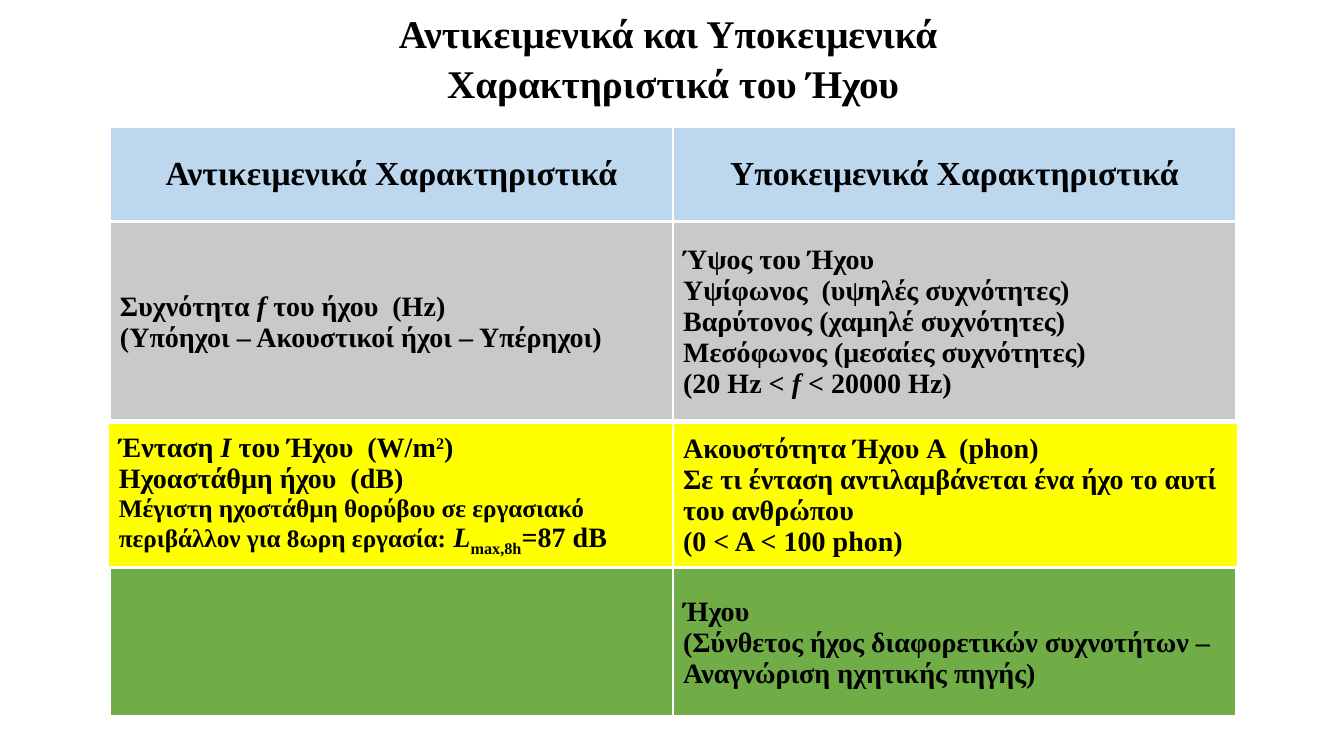
from dataclasses import dataclass

import pptx
import pptx.util
import pptx.dml.color
import pptx.enum.text
import pptx.oxml
import pptx.oxml.ns
from pptx.util import Inches

ALIGN = pptx.enum.text.PP_ALIGN
ANCHOR = pptx.enum.text.MSO_ANCHOR


@dataclass(frozen=True)
class Theme:
    font: str = "Times New Roman"
    text: str = "000000"
    border: str = "FFFFFF"
    header: str = "BDD7EE"
    frequency: str = "C9C9C9"
    intensity: str = "FFFF00"
    timbre: str = "70AD47"
    title_size: int = 28
    header_size: int = 24
    body_size: int = 20
    note_size: int = 18


@dataclass(frozen=True)
class Run:
    text: str
    italic: bool = False
    baseline: int = 0  # percent; positive is superscript
    size: int | None = None


Line = list[Run]


@dataclass(frozen=True)
class Band:
    left: float
    top: float
    width: float
    height: float
    fill: str
    cells: tuple[list[Line], list[Line]]
    size: int
    align: ALIGN = ALIGN.LEFT


T = Theme()

# Content: one single-row table per band
BANDS = [
    Band(1.09, 1.26, 11.17, 0.94, T.header, (
        [[Run("Αντικειμενικά Χαρακτηριστικά")]],
        [[Run("Υποκειμενικά Χαρακτηριστικά")]],
    ), T.header_size, ALIGN.CENTER),
    Band(1.09, 2.21, 11.17, 1.97, T.frequency, (
        [[Run("Συχνότητα "), Run("f", italic=True), Run(" του ήχου  (Hz)")],
         [Run("(Υπόηχοι – Ακουστικοί ήχοι – Υπέρηχοι)")]],
        [[Run("Ύψος του Ήχου")],
         [Run("Υψίφωνος  (υψηλές συχνότητες)")],
         [Run("Βαρύτονος (χαμηλέ συχνότητες)")],
         [Run("Μεσόφωνος (μεσαίες συχνότητες)")],
         [Run("(20 Hz < "), Run("f", italic=True), Run(" < 20000 Hz)")]],
    ), T.body_size),
    Band(1.08, 4.2, 11.19, 1.43, T.intensity, (
        [[Run("Ένταση "), Run("Ι", italic=True), Run(" του Ήχου  (W/m"),
          Run("2", baseline=30), Run(")")],
         [Run("Ηχοαστάθμη ήχου  (dB)")],
         [Run("Μέγιστη ηχοστάθμη θορύβου σε εργασιακό περιβάλλον για 8ωρη εργασία:",
              size=T.note_size),
          Run(" "), Run("L", italic=True), Run("max,8h", baseline=-25), Run("=87 dB")]],
        [[Run("Ακουστότητα Ήχου A  (phon)")],
         [Run("Σε τι ένταση αντιλαμβάνεται ένα ήχο το αυτί του ανθρώπου")],
         [Run("(0 < A < 100 phon)")]],
    ), T.body_size),
    Band(1.09, 5.64, 11.17, 1.47, T.timbre, (
        [],
        [[Run("Ήχου")],
         [Run("(Σύνθετος ήχος διαφορετικών συχνοτήτων – Αναγνώριση ηχητικής πηγής)")]],
    ), T.body_size),
]
TITLE = [[Run("Αντικειμενικά και Υποκειμενικά ")], [Run("Χαρακτηριστικά του Ήχου")]]


def rgb(value: str) -> pptx.dml.color.RGBColor:
    return pptx.dml.color.RGBColor.from_string(value)


def write_lines(tf, lines: list[Line], size: int, align: ALIGN,
                spacing: float = 1.0) -> None:
    for i, line in enumerate(lines):
        p = tf.paragraphs[0] if i == 0 else tf.add_paragraph()
        p.alignment = align
        p.line_spacing = spacing
        p.font.name = T.font
        p.font.size = pptx.util.Pt(size)
        p.font.bold = True
        p.font.color.rgb = rgb(T.text)
        for run in line:
            r = p.add_run()
            r.text = run.text
            if run.italic:
                r.font.italic = True
            if run.size:
                r.font.size = pptx.util.Pt(run.size)
            if run.baseline:
                r.font._element.set("baseline", str(run.baseline * 1000))


def add_borders(cell) -> None:
    tc_pr = cell._tc.get_or_add_tcPr()
    for side, points in (("L", 1), ("R", 1), ("T", 1), ("B", 3)):
        tc_pr.append(pptx.oxml.parse_xml(
            f'<a:ln{side} {pptx.oxml.ns.nsdecls("a")} w="{pptx.util.Pt(points)}">'
            f'<a:solidFill><a:srgbClr val="{T.border}"/></a:solidFill></a:ln{side}>'))


def add_band(s, band: Band) -> None:
    table = s.shapes.add_table(1, 2, Inches(band.left), Inches(band.top),
                               Inches(band.width), Inches(band.height)).table
    table.first_row = False
    table.horz_banding = False
    for cell, lines in zip(table.rows[0].cells, band.cells):
        add_borders(cell)
        cell.fill.solid()
        cell.fill.fore_color.rgb = rgb(band.fill)
        cell.vertical_anchor = ANCHOR.MIDDLE
        write_lines(cell.text_frame, lines, band.size, band.align)


def main() -> None:
    prs = pptx.Presentation()
    prs.slide_width, prs.slide_height = Inches(13.33), Inches(7.5)
    s = prs.slides.add_slide(prs.slide_layouts[5])

    # Title
    title = s.shapes.title
    title.left, title.top = Inches(0.01), Inches(0.01)
    title.width, title.height = Inches(13.33), Inches(1.04)
    tf = title.text_frame
    tf.word_wrap = True
    tf.auto_size = pptx.enum.text.MSO_AUTO_SIZE.NONE
    tf.vertical_anchor = ANCHOR.TOP
    write_lines(tf, TITLE, T.title_size, ALIGN.CENTER, spacing=1.07)

    # Stacked bands
    for band in BANDS:
        add_band(s, band)

    prs.save("out.pptx")


if __name__ == "__main__":
    main()
